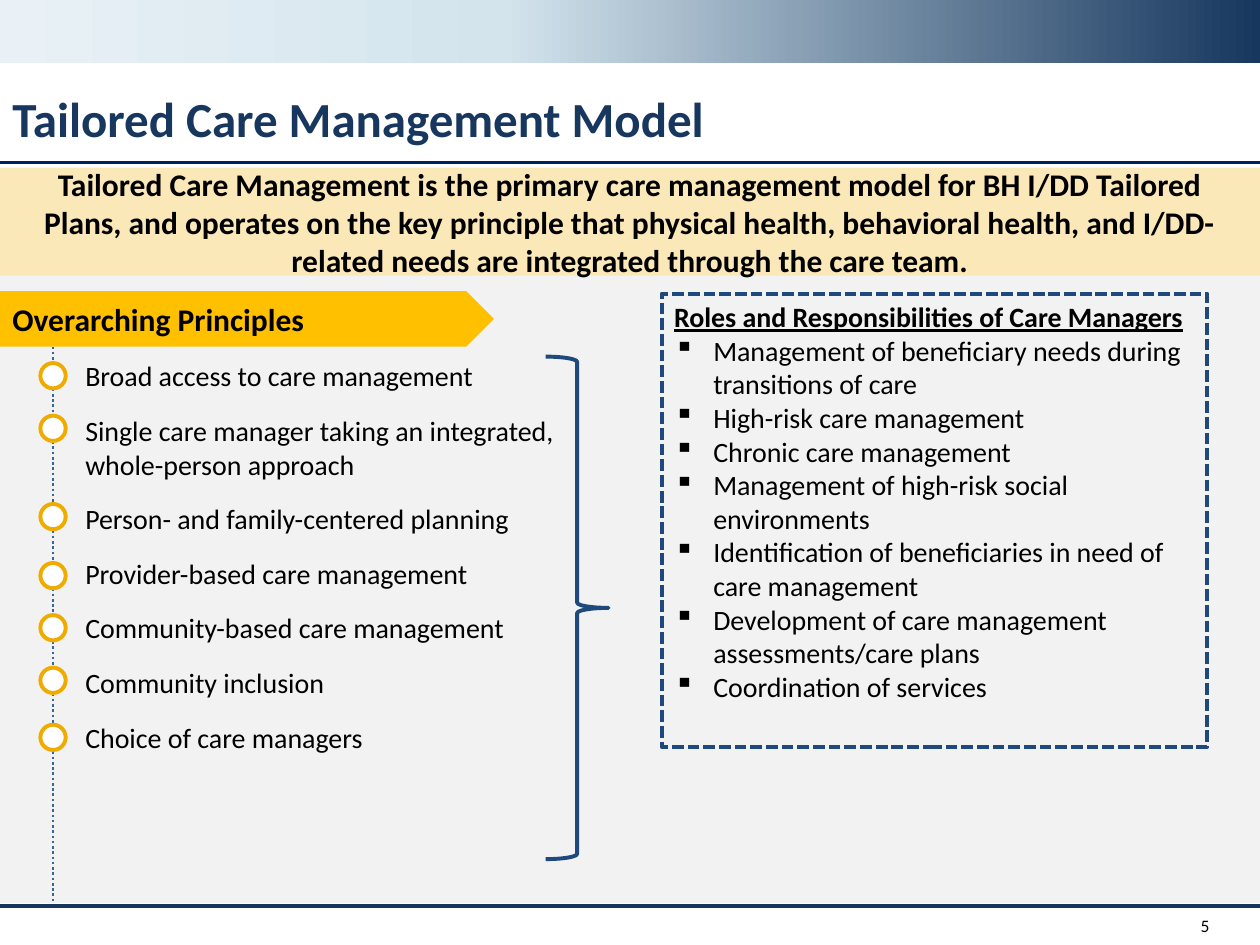
from lxml import etree
from pptx import Presentation
from pptx.dml.color import RGBColor
from pptx.enum.dml import MSO_LINE_DASH_STYLE as Dash
from pptx.enum.shapes import MSO_CONNECTOR, MSO_SHAPE as Shape
from pptx.enum.text import MSO_ANCHOR as Anchor, PP_ALIGN as Align
from pptx.oxml.ns import qn
from pptx.util import Cm, Pt

TITLE = "Tailored Care Management Model"
SUMMARY = (
    "Tailored Care Management is the primary care management model for BH I/DD "
    "Tailored Plans, and operates on the key principle that physical health, "
    "behavioral health, and I/DD-related needs are integrated through the care team."
)
PRINCIPLES_HEADING = "Overarching Principles"
PRINCIPLES = [
    ("Broad access to care management", 7.32),
    ("Single care manager taking an integrated, whole-person approach", 8.38),
    ("Person- and family-centered planning", 10.16),
    ("Provider-based care management", 11.35),
    ("Community-based care management", 12.4),
    ("Community inclusion", 13.46),
    ("Choice of care managers", 14.61),
]
ROLES_HEADING = "Roles and Responsibilities of Care Managers"
ROLES = [
    "Management of beneficiary needs during transitions of care",
    "High-risk care management",
    "Chronic care management",
    "Management of high-risk social environments",
    "Identification of beneficiaries in need of care management",
    "Development of care management assessments/care plans",
    "Coordination of services",
]
PAGE_NUMBER = "5"

COLORS = {
    "navy": "17375E", "rule": "002060", "blue": "1F497D", "steel": "336699",
    "pale": "D3E4ED", "mist": "E9F1F6", "panel": "F2F2F2", "cream": "FAE8B8",
    "gold": "FFC000", "amber": "F0AB00", "white": "FFFFFF", "black": "000000",
}
BANNER_STOPS = [(0, "navy"), (60, "pale"), (100, "mist")]
WIDTH, HEIGHT = 25.4, 19.05
DOT = 0.51
TIMELINE_X = 1.07
INDENT = Cm(0.79)


def color(name):
    return RGBColor.from_string(COLORS[name])


def add_shape(kind, left, top, width, height, fill=None, line=None, weight=2.25):
    shape = page.shapes.add_shape(kind, Cm(left), Cm(top), Cm(width), Cm(height))
    shape.shadow.inherit = False
    if fill:
        shape.fill.solid()
        shape.fill.fore_color.rgb = color(fill)
    else:
        shape.fill.background()
    if line:
        shape.line.color.rgb = color(line)
        shape.line.width = Pt(weight)
    else:
        shape.line.fill.background()
    return shape


def add_line(start, end, name, weight, dash=None):
    line = page.shapes.add_connector(MSO_CONNECTOR.STRAIGHT, *map(Cm, start + end))
    line.line.color.rgb = color(name)
    line.line.width = Pt(weight)
    if dash:
        line.line.dash_style = dash
    properties = line._element.find(qn("p:spPr"))
    etree.SubElement(properties, qn("a:effectLst"))


def add_box(left, top, width, height):
    return page.shapes.add_textbox(Cm(left), Cm(top), Cm(width), Cm(height))


def write(shape, lines, size, name="black", bold=False, align=Align.LEFT, anchor=Anchor.TOP):
    frame = shape.text_frame
    frame.text = "\n".join(lines)
    frame.word_wrap = True
    frame.vertical_anchor = anchor
    for para in frame.paragraphs:
        para.alignment = align
        for span in para.runs:
            span.font.name = "Calibri"
            span.font.size = Pt(size)
            span.font.bold = bold
            span.font.color.rgb = color(name)
    return frame


def add_bullet(para):
    properties = para._p.get_or_add_pPr()
    properties.set("marL", str(INDENT))
    properties.set("indent", str(-INDENT))
    etree.SubElement(properties, qn("a:buChar"), char="▪")


def fill_banner(banner):
    banner.fill.gradient()
    banner.fill.gradient_angle = 180
    stops = banner._element.spPr.find(qn("a:gradFill")).find(qn("a:gsLst"))
    for stop in list(stops):
        stops.remove(stop)
    for percent, name in BANNER_STOPS:
        stop = etree.SubElement(stops, qn("a:gs"), pos=str(percent * 1000))
        etree.SubElement(stop, qn("a:srgbClr"), val=COLORS[name])


deck = Presentation()
deck.slide_width, deck.slide_height = Cm(WIDTH), Cm(HEIGHT)
page = deck.slides.add_slide(deck.slide_layouts[6])

fill_banner(add_shape(Shape.RECTANGLE, 0, 0, WIDTH, 1.27))
add_line((0, 3.28), (WIDTH, 3.28), "rule", 2)
add_line((0, 18.26), (WIDTH, 18.26), "navy", 2.25)
add_shape(Shape.RECTANGLE, 0, 5.51, WIDTH, 12.7, "panel")
add_line((TIMELINE_X, 6.35), (TIMELINE_X, 18.21), "steel", 1.5, Dash.ROUND_DOT)

title = write(add_box(0, 1.7, 21.79, 1.52), [TITLE], 28, "navy", True, anchor=Anchor.MIDDLE)
title.paragraphs[0].line_spacing = 0.9

summary = add_shape(Shape.RECTANGLE, 0, 3.38, WIDTH, 2.18, "cream")
frame = write(summary, [SUMMARY], 18, bold=True, align=Align.CENTER, anchor=Anchor.MIDDLE)
frame.margin_left = frame.margin_right = Cm(0.76)
frame.margin_top = frame.margin_bottom = Cm(0.15)

write(add_box(23.06, 18.26, 1.57, 0.79), [PAGE_NUMBER], 10, align=Align.RIGHT, anchor=Anchor.MIDDLE)

heading = add_shape(Shape.PENTAGON, 0, 5.87, 9.96, 1.12, "gold")
write(heading, [PRINCIPLES_HEADING], 18, bold=True, anchor=Anchor.MIDDLE)

for _, top in PRINCIPLES:
    add_shape(Shape.OVAL, TIMELINE_X - DOT / 2, top, DOT, DOT, "white", "amber")

principles = write(add_box(1.47, 7.11, 9.96, 8.28), [text for text, _ in PRINCIPLES], 16)
for index, para in enumerate(principles.paragraphs):
    para.space_before = Pt(6 if index else 0)
    para.space_after = Pt(6)

roles_box = add_shape(Shape.RECTANGLE, 13.34, 5.92, 11, 9.14, line="blue")
roles_box.line.dash_style = Dash.SQUARE_DOT
roles = write(roles_box, [ROLES_HEADING] + ROLES, 16)
roles_title, *role_paras = roles.paragraphs
roles_title.runs[0].font.bold = True
roles_title.runs[0].font.underline = True
for para in role_paras:
    add_bullet(para)

add_shape(Shape.RIGHT_BRACE, 11, 7.19, 1.27, 10.13, line="blue")

deck.save("out.pptx")
